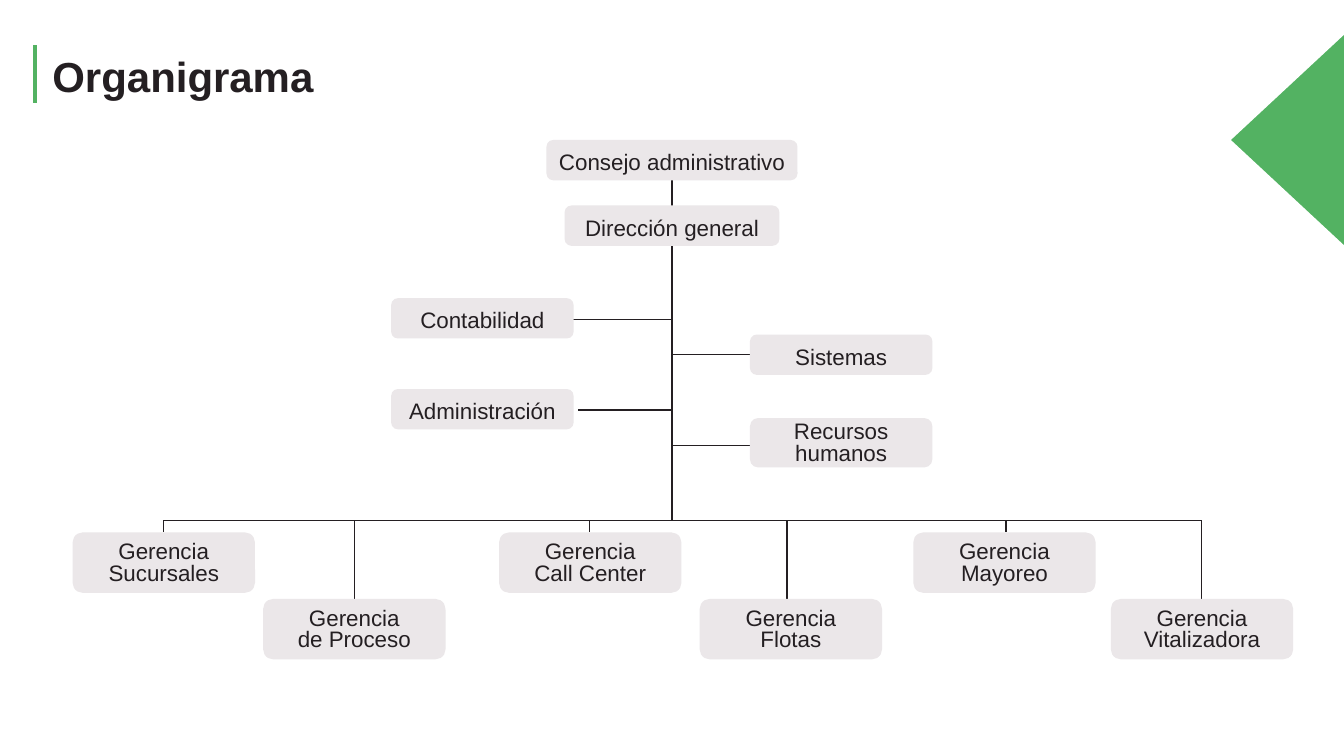
from lxml.etree import SubElement
from pptx import Presentation
from pptx.dml.color import RGBColor
from pptx.enum.shapes import MSO_CONNECTOR as Conn, MSO_SHAPE as Kind
from pptx.enum.text import MSO_ANCHOR as Anchor, PP_ALIGN as Align
from pptx.oxml.ns import qn
from pptx.util import Pt

INK = RGBColor(0x24, 0x1F, 0x22)
GREEN = RGBColor(0x53, 0xB2, 0x62)
GREY = RGBColor(0xEB, 0xE7, 0xE9)
WHITE = RGBColor(0xFF, 0xFF, 0xFF)
FONT = "Arial"
WIDE, LOW, TALL = 130.3, 28.8, 43.2

HEADS = [("Consejo administrativo", 0, 179.3), ("Dirección general", 46.8, 153.4)]
STAFF = [
    ("Contabilidad", -200.6, 113, LOW, 128.2, -70.6),
    ("Administración", -200.6, 177.9, LOW, 193, -67.4),
    ("Sistemas", 55.7, 139, LOW, 153.4, 55.7),
    ("Recursos humanos", 55.7, 198.6, 35.3, 218.2, 55.7),
]
UNITS = [
    ("Sucursales", -363, -363),
    ("de Proceso", -226.9, -226.6),
    ("Call Center", -58.4, -58.8),
    ("Flotas", 84.9, 82.3),
    ("Mayoreo", 237.5, 238.6),
    ("Vitalizadora", 378.6, 378.2),
]


def line(slide, x1, y1, x2, y2, color=INK, width=1):
    """Draw a straight line without a shadow."""
    link = slide.shapes.add_connector(Conn.STRAIGHT, Pt(x1), Pt(y1), Pt(x2), Pt(y2))
    link.line.color.rgb = color
    link.line.width = Pt(width)
    SubElement(link._element.spPr, qn("a:effectLst"))


def write(para, text, size, bold=False):
    """Add one formatted run to a paragraph."""
    run = para.add_run()
    run.text = text
    run.font.name = FONT
    run.font.size = Pt(size)
    run.font.bold = bold
    run.font.color.rgb = INK


def card(slide, x, y, w, h, rows, inset=0):
    """Draw a rounded box with one centred paragraph per row."""
    box = slide.shapes.add_shape(Kind.ROUNDED_RECTANGLE, Pt(x), Pt(y), Pt(w), Pt(h))
    box.shadow.inherit = False
    box.fill.solid()
    box.fill.fore_color.rgb = GREY
    box.line.fill.background()
    frame = box.text_frame
    frame.word_wrap = True
    frame.vertical_anchor = Anchor.MIDDLE
    frame.margin_left = frame.margin_right = Pt(inset)
    frame.margin_top = Pt(2)
    frame.margin_bottom = 0
    for i, row in enumerate(rows):
        para = frame.add_paragraph() if i else frame.paragraphs[0]
        para.alignment = Align.CENTER
        if h > LOW:
            para.line_spacing = 0.8
        write(para, row, 16)


def header(slide, x, y, w, h):
    """Place the title beside its green rule."""
    line(slide, x, y, x, y + 41, GREEN, 3)
    title = slide.shapes.title
    title.left, title.top, title.width, title.height = Pt(x + 5), Pt(y), Pt(w - 5), Pt(h)
    frame = title.text_frame
    frame.vertical_anchor = Anchor.MIDDLE
    para = frame.paragraphs[0]
    para.alignment = Align.LEFT
    write(para, "Organigrama", 30, True)


def chart(slide, x, y, w, h):
    """Draw the organisation chart around the middle of its box."""
    mid = x + w / 2
    bar = y + h - 99.4
    line(slide, mid, y + LOW, mid, bar)
    line(slide, mid + UNITS[0][2], bar, mid + UNITS[-1][2], bar)
    for name, top, wide in HEADS:
        card(slide, mid - wide / 2, y + top, wide, LOW, [name])
    for name, left, top, high, arm, end in STAFF:
        line(slide, mid, y + arm, mid + end, y + arm)
        card(slide, mid + left, y + top, WIDE, high, [name], 18 if high > LOW else 0)
    for i, (name, center, stem) in enumerate(UNITS):
        top = y + h - TALL - (0 if i % 2 else 47.5)
        line(slide, mid + stem, bar, mid + stem, top)
        card(slide, mid + center - WIDE / 2, top, WIDE, TALL, ["Gerencia", name])


def corner(slide, x, y, w, h):
    """Draw the green diamond cut by the slide edge."""
    gem = slide.shapes.add_shape(Kind.DIAMOND, Pt(x), Pt(y), Pt(w), Pt(h))
    gem.shadow.inherit = False
    gem.fill.solid()
    gem.fill.fore_color.rgb = GREEN
    gem.line.color.rgb = WHITE
    gem.line.width = Pt(3)


def main():
    """Build and save the slide."""
    deck = Presentation()
    deck.slide_width, deck.slide_height = Pt(960), Pt(540)
    slide = deck.slides.add_slide(deck.slide_layouts[5])
    header(slide, 25.2, 32.4, 300, 44)
    chart(slide, 36, 100, 888, 371)
    corner(slide, 877, 23, 165.6, 154)
    deck.save("out.pptx")


if __name__ == "__main__":
    main()
